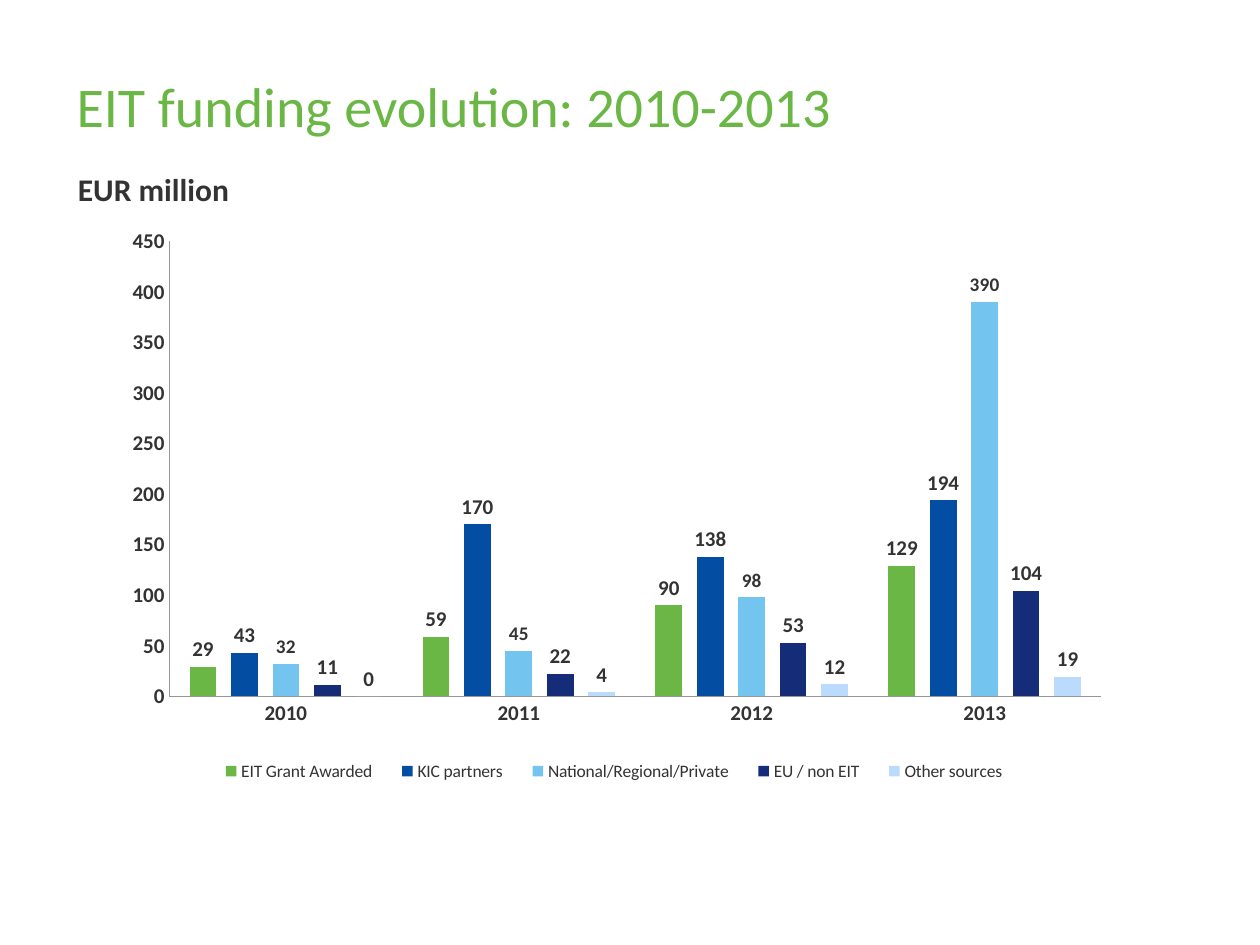
from lxml import etree
from pptx import Presentation
from pptx.chart.data import CategoryChartData
from pptx.dml.color import RGBColor
from pptx.enum.chart import XL_CHART_TYPE as ChartType, XL_LABEL_POSITION as LabelPosition
from pptx.enum.chart import XL_LEGEND_POSITION as LegendPosition, XL_TICK_MARK as TickMark
from pptx.enum.text import MSO_ANCHOR as Anchor
from pptx.oxml.ns import qn
from pptx.util import Inches, Pt

COLORS = {
    "green": "6BB745",
    "blue": "034EA2",
    "sky": "73C4EE",
    "navy": "152D79",
    "pale": "BBDBFE",
    "text": "333333",
    "axis": "969696",
}


def format_font(font, size, bold=False, color="text"):
    for name, value in {"name": "Calibri", "size": Pt(size), "bold": bold}.items():
        setattr(font, name, value)
    font.color.rgb = RGBColor.from_string(COLORS[color])


def set_layout(parent, index, values):
    for old in parent.findall(qn("c:layout")):
        parent.remove(old)
    layout = etree.Element(qn("c:layout"))
    manual = etree.SubElement(layout, qn("c:manualLayout"))
    for tag, value in values.items():
        etree.SubElement(manual, qn(f"c:{tag}")).set("val", str(value))
    parent.insert(index, layout)


deck = Presentation()
deck.slide_width, deck.slide_height = Inches(10), Inches(7.5)
page = deck.slides.add_slide(deck.slide_layouts[6])

headings = [
    ("EIT funding evolution: 2010-2013", (0.51, 0.59, 9.37, 0.56), 32, False, "green", 0.9),
    ("EUR million", (0.52, 1.3, 8.9, 0.4), 18, True, "text", 1.0),
]
for text, place, size, bold, color, spacing in headings:
    box = page.shapes.add_textbox(*[Inches(length) for length in place])
    frame = box.text_frame
    frame.word_wrap = True
    frame.vertical_anchor = Anchor.MIDDLE
    para = frame.paragraphs[0]
    para.line_spacing = spacing
    span = para.add_run()
    span.text = text
    format_font(span.font, size, bold, color)

funding = [
    ("EIT Grant Awarded", (29, 59, 90, 129), "green", 12),
    ("KIC partners", (43, 170, 138, 194), "blue", 12),
    ("National/Regional/Private", (32, 45, 98, 390), "sky", 11),
    ("EU / non EIT", (11, 22, 53, 104), "navy", 12),
    ("Other sources", (0, 4, 12, 19), "pale", 12),
]
data = CategoryChartData(number_format="0")
data.categories = ["2010", "2011", "2012", "2013"]
for name, values, color, size in funding:
    data.add_series(name, values)

chart = page.shapes.add_chart(
    ChartType.COLUMN_CLUSTERED, Inches(0.75), Inches(1.78), Inches(8.5), Inches(4.57), data
).chart
chart.has_title = False
format_font(chart.font, 18)

plot = chart.plots[0]
for name, value in {"gap_width": 151, "overlap": -55, "vary_by_categories": False}.items():
    setattr(plot, name, value)

for series, (name, values, color, size) in zip(plot.series, funding):
    series.format.fill.solid()
    series.format.fill.fore_color.rgb = RGBColor.from_string(COLORS[color])
    labels = series.data_labels
    labels.show_value = True
    labels.position = LabelPosition.OUTSIDE_END
    format_font(labels.font, size, True)

for axis in (chart.category_axis, chart.value_axis):
    axis.has_major_gridlines = False
    axis.major_tick_mark = axis.minor_tick_mark = TickMark.NONE
    axis.format.line.width = Pt(0.25)
    axis.format.line.color.rgb = RGBColor.from_string(COLORS["axis"])
    format_font(axis.tick_labels.font, 12, True)

value_axis = chart.value_axis
for name, value in {"minimum_scale": 0, "maximum_scale": 450, "major_unit": 50}.items():
    setattr(value_axis, name, value)
value_axis.tick_labels.number_format = "#,##0"
value_axis.tick_labels.number_format_is_linked = False

chart.has_legend = True
legend = chart.legend
legend.position = LegendPosition.BOTTOM
legend.include_in_layout = False
format_font(legend.font, 10)

edges = {"xMode": "edge", "yMode": "edge"}
plot_area = chart.element.find(".//" + qn("c:plotArea"))
set_layout(
    plot_area, 0, {"layoutTarget": "inner", **edges, "x": 0.07, "y": 0.03, "w": 0.87, "h": 0.79}
)
legend_area = chart.element.find(".//" + qn("c:legend"))
set_layout(legend_area, 1, {**edges, "x": 0.1, "y": 0.91, "w": 0.77, "h": 0.08})

deck.save("out.pptx")
